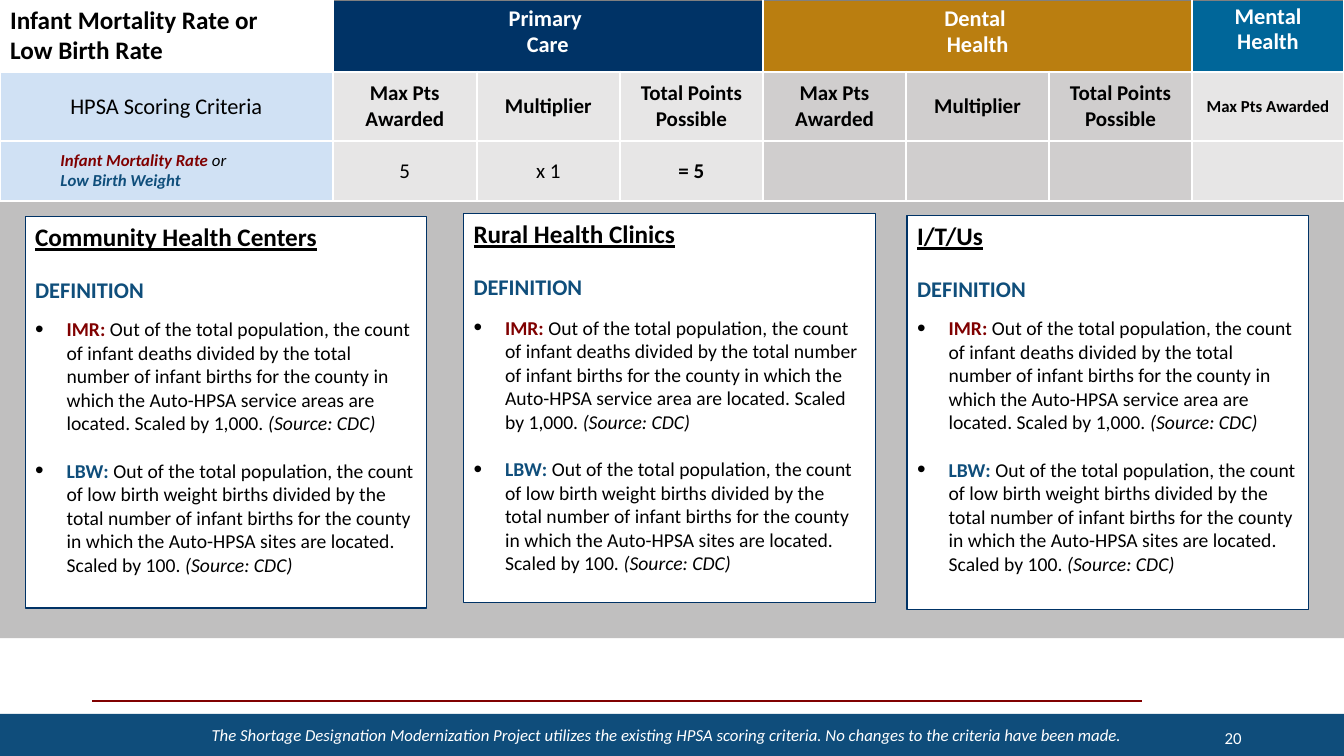
"""Builds the infant mortality and low birth weight scoring slide."""
from lxml.etree import SubElement
from pptx import Presentation
from pptx.dml.color import RGBColor
from pptx.enum.shapes import MSO_CONNECTOR, MSO_SHAPE
from pptx.enum.text import MSO_ANCHOR as Anchor, PP_ALIGN as Align
from pptx.oxml import parse_xml
from pptx.oxml.ns import nsdecls, qn
from pptx.util import Pt

WHITE = RGBColor(0xFF, 0xFF, 0xFF)
BLACK = RGBColor(0, 0, 0)
NAVY = RGBColor(0x00, 0x33, 0x66)
GOLD = RGBColor(0xBA, 0x7E, 0x10)
TEAL = RGBColor(0x00, 0x66, 0x99)
MAROON = RGBColor(0x80, 0, 0)
BLUE = RGBColor(0x0F, 0x4E, 0x7B)
FOOTER_BLUE = RGBColor(0x0F, 0x4D, 0x7B)
PALE_BLUE = RGBColor(0xD0, 0xE1, 0xF4)
LIGHT = RGBColor(0xE7, 0xE6, 0xE6)
MEDIUM = RGBColor(0xD0, 0xCE, 0xCE)
BACKDROP = RGBColor(0xC0, 0xBF, 0xBF)
RULE_GREY = RGBColor(0x80, 0x80, 0x80)

COLUMNS = [237.6, 103, 102.2, 102.2, 102.2, 102.2, 102.2, 108.4]
ROWS = [45.4, 49.7, 42.5]
COLUMN_FILLS = [PALE_BLUE] + [LIGHT] * 3 + [MEDIUM] * 3 + [LIGHT]
TITLE = ["Infant Mortality Rate or", "Low Birth Rate"]
PROGRAMS = [
    (1, 3, NAVY, [("Primary ", 1), ("Care", 0.9)]),
    (4, 6, GOLD, [("Dental ", 1), ("Health", 0.9)]),
    (7, 7, TEAL, [("Mental Health", 0.9)]),
]
CRITERIA = "HPSA Scoring Criteria"
MEASURES = ["Max Pts Awarded", "Multiplier", "Total Points Possible"]
POINTS = [("5", False), ("x 1", False), ("= 5", True)]
MEASURED = [
    [("Infant Mortality Rate ", 12, MAROON, True, True), ("or", 12, BLACK, False, True)],
    [("Low Birth Weight", 12, BLUE, True, True)],
]

IMR = ("Out of the total population, the count of infant deaths divided by the total "
       "number of infant births for the county in which the Auto-HPSA service {} "
       "located. Scaled by 1,000. ")
LBW = ("Out of the total population, the count of low birth weight births divided by "
       "the total number of infant births for the county in which the Auto-HPSA sites "
       "are located. Scaled by 100. ")
SOURCE = "(Source: CDC)"
CARDS = [
    ("Community Health Centers", "areas are", (18, 154.8, 286.6, 279.4), 9.8),
    ("Rural Health Clinics", "area are", (331.2, 152.6, 294, 278), 11),
    ("I/T/Us", "area are", (648, 154.1, 286.6, 281.5), 9.8),
]
FOOTNOTE = ("The Shortage Designation Modernization Project utilizes the existing HPSA "
            "scoring criteria. No changes to the criteria have been made.")
PAGE_NUMBER = "20"


def add_runs(para, runs, align=Align.LEFT):
    para.alignment = align
    for text, size, color, bold, italic in runs:
        span = para.add_run()
        span.text = text
        span.font.name = "Calibri"
        span.font.size = Pt(size)
        span.font.color.rgb = color
        span.font.bold = bold
        span.font.italic = italic


def add_paragraphs(frame, count):
    return [frame.paragraphs[0]] + [frame.add_paragraph() for _ in range(count - 1)]


def add_box(page, place, fill, outline=None):
    box = page.shapes.add_shape(MSO_SHAPE.RECTANGLE, *map(Pt, place))
    box.shadow.inherit = False
    box.fill.solid()
    box.fill.fore_color.rgb = fill
    if outline is None:
        box.line.fill.background()
    else:
        box.line.color.rgb = outline
        box.line.width = Pt(1)
    return box


def style_cell(cell, fill, top=(WHITE, 1.5)):
    cell.fill.solid()
    cell.fill.fore_color.rgb = fill
    edge = (WHITE, 1.5)
    borders = [("lnL", edge), ("lnR", edge), ("lnT", top), ("lnB", edge)]
    for position, (tag, (color, width)) in enumerate(borders):
        cell._tc.get_or_add_tcPr().insert(position, parse_xml(
            f'<a:{tag} {nsdecls("a")} w="{int(Pt(width))}"><a:solidFill>'
            f'<a:srgbClr val="{color}"/></a:solidFill></a:{tag}>'))


def fill_cell(cell, runs, align=Align.CENTER):
    for para, spans in zip(add_paragraphs(cell.text_frame, len(runs)), runs):
        add_runs(para, spans, align)


def add_scoring_table(page):
    table = page.shapes.add_table(len(ROWS), len(COLUMNS), 0, 0,
                                  Pt(sum(COLUMNS)), Pt(sum(ROWS))).table
    table.first_row = table.horz_banding = False
    for column, width in zip(table.columns, COLUMNS):
        column.width = Pt(width)
    for row, height in zip(table.rows, ROWS):
        row.height = Pt(height)

    style_cell(table.cell(0, 0), WHITE)
    fill_cell(table.cell(0, 0), [[(line, 18, BLACK, True, False)] for line in TITLE], Align.LEFT)
    for first, last, color, lines in PROGRAMS:
        for index in range(first, last + 1):
            style_cell(table.cell(0, index), color, (RULE_GREY, 1))
        header = table.cell(0, first)
        if last > first:
            header.merge(table.cell(0, last))
        fill_cell(header, [[(text, 16, WHITE, True, False)] for text, _ in lines])
        for para, (_, spacing) in zip(header.text_frame.paragraphs, lines):
            para.line_spacing = spacing

    for row in (1, 2):
        for index, color in enumerate(COLUMN_FILLS):
            style_cell(table.cell(row, index), color)
            table.cell(row, index).vertical_anchor = Anchor.MIDDLE
    fill_cell(table.cell(1, 0), [[(CRITERIA, 16, BLACK, False, False)]])
    for index, text in enumerate(MEASURES * 2 + MEASURES[:1], 1):
        size = 12 if index == 7 else 15
        fill_cell(table.cell(1, index), [[(text, size, BLACK, True, False)]])
    fill_cell(table.cell(2, 0), MEASURED, Align.LEFT)
    for para in table.cell(2, 0).text_frame.paragraphs:
        para.level = 1
        para._p.get_or_add_pPr().set("marL", str(int(Pt(36))))
        para._p.get_or_add_pPr().set("indent", "0")
    for index, (text, bold) in enumerate(POINTS, 1):
        fill_cell(table.cell(2, index), [[(text, 15, BLACK, bold, False)]])


def add_bullet(para):
    properties = para._p.get_or_add_pPr()
    properties.set("marL", str(int(Pt(22.5))))
    properties.set("indent", str(int(Pt(-22.5))))
    SubElement(SubElement(properties, qn("a:buClr")), qn("a:srgbClr")).set("val", str(BLACK))
    SubElement(properties, qn("a:buSzPct")).set("val", "125000")
    SubElement(properties, qn("a:buFont")).set("typeface", "Arial")
    SubElement(properties, qn("a:buChar")).set("char", "•")


def add_card(page, title, service, place, bullet_gap):
    frame = add_box(page, place, WHITE, NAVY).text_frame
    frame.word_wrap = True
    frame.vertical_anchor = Anchor.TOP
    heading, label, *bullets = add_paragraphs(frame, 4)
    add_runs(heading, [(title, 18, BLACK, True, False)])
    heading.runs[0].font.underline = True
    add_runs(label, [("DEFINITION", 16, BLUE, True, False)])
    label.space_before = Pt(17.5)
    definitions = [("IMR: ", MAROON, IMR.format(service), bullet_gap),
                   ("LBW: ", BLUE, LBW, 17.1)]
    for para, (term, color, text, gap) in zip(bullets, definitions):
        add_bullet(para)
        para.space_before = Pt(gap)
        add_runs(para, [(term, 14, color, True, False), (text, 14, BLACK, False, False),
                        (SOURCE, 14, BLACK, False, True)])


def add_footer_text(page, place, text, italic, align, anchor):
    frame = page.shapes.add_textbox(*map(Pt, place)).text_frame
    frame.word_wrap = True
    frame.vertical_anchor = anchor
    add_runs(frame.paragraphs[0], [(text, 12, WHITE, False, italic)], align)


def main():
    deck = Presentation()
    deck.slide_width, deck.slide_height = Pt(960), Pt(540)
    page = deck.slides.add_slide(deck.slide_layouts[6])
    add_box(page, (0, 510, 960, 30), FOOTER_BLUE)
    rule = page.shapes.add_connector(MSO_CONNECTOR.STRAIGHT, Pt(66), Pt(500.4), Pt(816), Pt(500.4))
    rule.line.color.rgb = MAROON
    rule.line.width = Pt(1.5)
    SubElement(rule._element.spPr, qn("a:effectLst"))
    add_box(page, (0, 143.3, 960, 312.5), BACKDROP)
    add_scoring_table(page)
    for card in CARDS:
        add_card(page, *card)
    add_footer_text(page, (144, 514, 672, 41), FOOTNOTE, True, Align.LEFT, Anchor.TOP)
    add_footer_text(page, (678, 514, 216, 26), PAGE_NUMBER, False, Align.RIGHT, Anchor.MIDDLE)
    deck.save("out.pptx")


if __name__ == "__main__":
    main()
